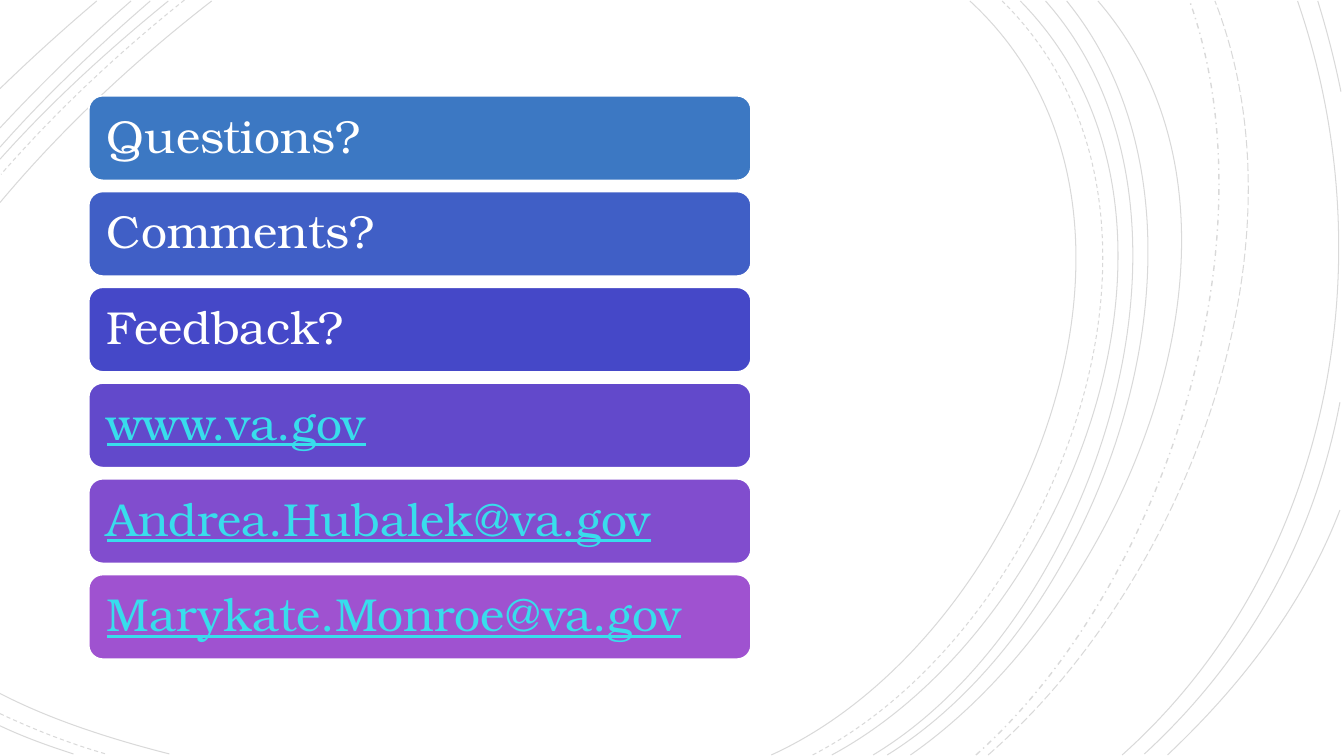
from dataclasses import dataclass

from lxml.etree import SubElement
from pptx import Presentation
from pptx.dml.color import RGBColor
from pptx.enum.dml import MSO_LINE_DASH_STYLE as Dash
from pptx.enum.shapes import MSO_SHAPE as Preset
from pptx.enum.text import MSO_ANCHOR as Anchor, PP_ALIGN as Align
from pptx.oxml.ns import qn
from pptx.shapes.autoshape import Shape
from pptx.shapes.shapetree import SlideShapes
from pptx.util import Inches, Pt

Point = tuple[float, float]

BAR_LEFT, BAR_TOP, BAR_WIDTH, BAR_HEIGHT, BAR_PITCH = 0.88, 0.95, 6.57, 0.84, 0.95
ARC_OPACITY = 15
WHITE, CYAN = "FFFFFF", "38DDEC"


@dataclass(frozen=True)
class Arc:
    start: Point
    bend_out: Point
    bend_in: Point
    end: Point
    dash: Dash = Dash.SOLID
    weight: float = 0.75


@dataclass(frozen=True)
class Bar:
    wording: str
    fill: str
    is_address: bool = False


ARCS = [
    Arc((7.65, 7.49), (10.16, 6.35), (11.88, 2.09), (9.62, 0.01)),
    Arc((0, 6.88), (0.52, 7.15), (1.13, 7.34), (1.68, 7.48)),
    Arc((2.1, 0.01), (1.34, 0.6), (0.62, 1.27), (0, 2.01)),
    Arc((8.06, 7.49), (10.46, 6.25), (12.08, 2.12), (9.94, 0.01), Dash.DASH),
    Arc((0, 7.08), (0.34, 7.24), (0.7, 7.38), (1.05, 7.48), Dash.DASH),
    Arc((1.83, 0), (1.18, 0.52), (0.56, 1.1), (0.01, 1.73), Dash.DASH),
    Arc((8.25, 7.49), (10.61, 6.22), (12.21, 2.13), (10.12, 0.01)),
    Arc((0, 7.2), (0.23, 7.31), (0.48, 7.4), (0.73, 7.48)),
    Arc((1.67, 0.01), (1.08, 0.49), (0.51, 1.01), (0, 1.58)),
    Arc((8.66, 7.49), (10.87, 6.16), (12.21, 2.08), (10.37, 0.01)),
    Arc((1.49, 0.01), (0.97, 0.46), (0.46, 0.94), (0, 1.46)),
    Arc((8.8, 7.49), (11, 6.12), (12.33, 2.16), (10.58, 0.01)),
    Arc((1.3, 0.01), (0.84, 0.41), (0.41, 0.83), (0, 1.27)),
    Arc((9.03, 7.49), (11.13, 6.03), (12.78, 2.2), (10.89, 0.01)),
    Arc((0.96, 0.01), (0.63, 0.29), (0.31, 0.58), (0, 0.88)),
    Arc((9.68, 7.49), (11.54, 5.83), (12.65, 2.41), (11.8, 0.01), Dash.DASH_DOT, 1),
    Arc((9.8, 7.49), (11.73, 5.81), (13.02, 2.51), (12.05, 0.01), Dash.LONG_DASH),
    Arc((11.13, 7.49), (13.2, 5.64), (13.76, 2.59), (12.87, 0.01)),
    Arc((11.35, 7.48), (12.38, 6.53), (13.03, 5.36), (13.29, 3.99)),
    Arc((13.3, 0.91), (13.24, 0.61), (13.16, 0.3), (13.07, 0.01)),
    Arc((11.58, 7.49), (12.31, 6.8), (12.93, 6), (13.29, 5.06)),
]

BARS = [
    Bar("Questions?", "3C78C3"),
    Bar("Comments?", "405FC6"),
    Bar("Feedback?", "4548C8"),
    Bar("www.va.gov", "6249CB", True),
    Bar("Andrea.Hubalek@va.gov", "814DCE", True),
    Bar("Marykate.Monroe@va.gov", "9F52D0", True),
]

FRAME_FORMAT = {
    "word_wrap": True,
    "vertical_anchor": Anchor.MIDDLE,
    **{f"margin_{side}": Inches(0.14) for side in ("left", "top", "right", "bottom")},
}
PARAGRAPH_FORMAT = {"alignment": Align.LEFT, "line_spacing": 0.9}
FONT_FORMAT = {"name": "TeX Gyre Bonum", "size": Pt(33)}


def apply(target: object, values: dict[str, object]) -> None:
    for name, value in values.items():
        setattr(target, name, value)


def paint(color_format: object, color: str) -> None:
    color_format.rgb = RGBColor.from_string(color)


def outline(shape: Shape, color: str, weight: float) -> None:
    shape.shadow.inherit = False
    shape.line.width = Pt(weight)
    paint(shape.line.color, color)


def bend(curve: Shape) -> None:
    route = curve.element.find(".//" + qn("a:path"))
    cubic = SubElement(route, qn("a:cubicBezTo"))
    for segment in route.findall(qn("a:lnTo")):
        cubic.append(segment[0])
        route.remove(segment)


def draw_arc(shapes: SlideShapes, arc: Arc) -> None:
    start, *rest = [
        (Inches(x), Inches(y)) for x, y in (arc.start, arc.bend_out, arc.bend_in, arc.end)
    ]
    builder = shapes.build_freeform(*start)
    builder.add_line_segments(rest, close=False)
    curve = builder.convert_to_shape()
    bend(curve)
    curve.fill.background()
    outline(curve, "000000", arc.weight)
    curve.line.dash_style = arc.dash
    ink = curve.element.find(".//" + qn("a:ln")).find(".//" + qn("a:srgbClr"))
    SubElement(ink, qn("a:alpha"), val=str(ARC_OPACITY * 1000))


def draw_bar(shapes: SlideShapes, bar: Bar, row: int) -> None:
    box = (BAR_LEFT, BAR_TOP + row * BAR_PITCH, BAR_WIDTH, BAR_HEIGHT)
    panel = shapes.add_shape(Preset.ROUNDED_RECTANGLE, *map(Inches, box))
    panel.fill.solid()
    paint(panel.fill.fore_color, bar.fill)
    outline(panel, WHITE, 1.25)
    apply(panel.text_frame, FRAME_FORMAT)
    paragraph = panel.text_frame.paragraphs[0]
    apply(paragraph, PARAGRAPH_FORMAT)
    wording = paragraph.add_run()
    wording.text = bar.wording
    apply(wording.font, FONT_FORMAT | {"underline": bar.is_address})
    paint(wording.font.color, CYAN if bar.is_address else WHITE)


def main() -> None:
    deck = Presentation()
    deck.slide_width, deck.slide_height = Inches(13.33), Inches(7.5)
    closing = deck.slides.add_slide(deck.slide_layouts[6])
    for arc in ARCS:
        draw_arc(closing.shapes, arc)
    for row, bar in enumerate(BARS):
        draw_bar(closing.shapes, bar, row)
    deck.save("out.pptx")


if __name__ == "__main__":
    main()
